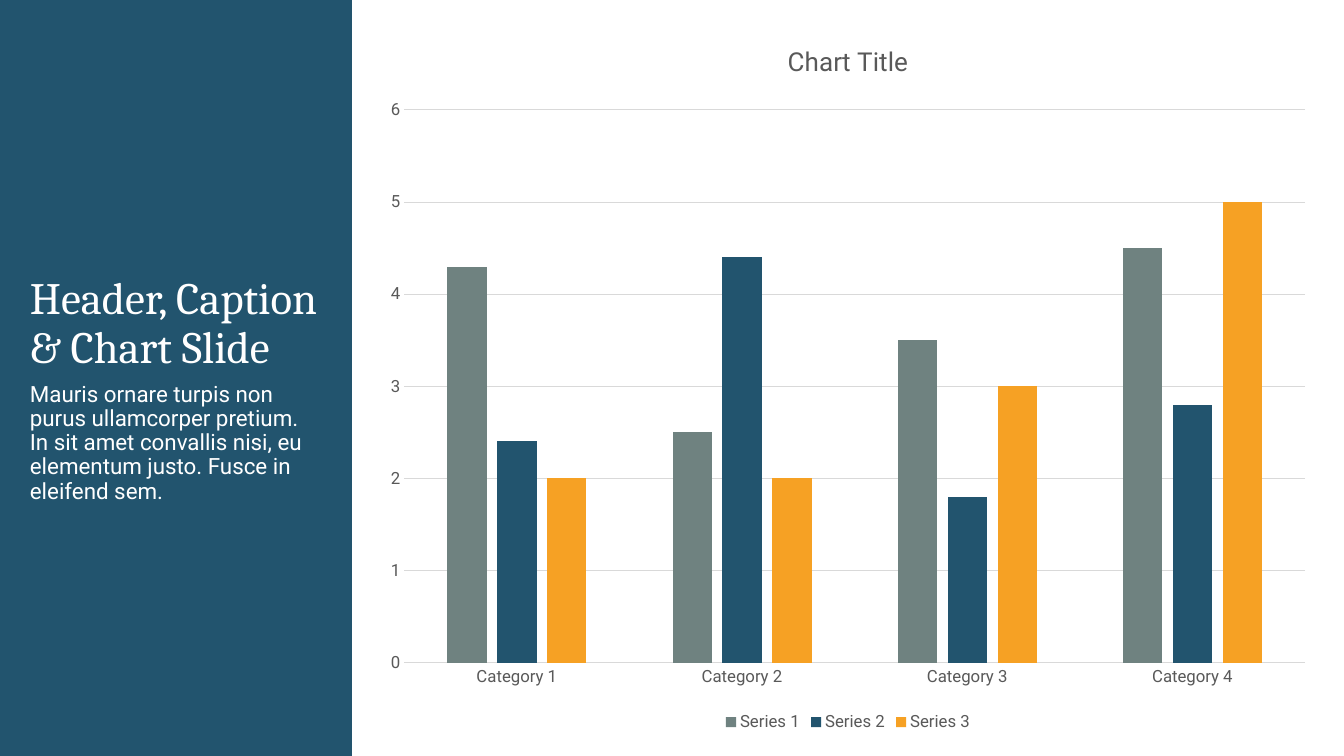
"""Build a slide with a header and caption panel beside a clustered column chart."""
from pptx import Presentation
from pptx.chart.data import CategoryChartData
from pptx.dml.color import RGBColor
from pptx.enum.chart import XL_CHART_TYPE, XL_LEGEND_POSITION, XL_TICK_MARK
from pptx.enum.shapes import MSO_SHAPE
from pptx.enum.text import MSO_ANCHOR, MSO_AUTO_SIZE, PP_ALIGN
from pptx.util import Cm, Pt

TITLE = "Header, Caption & Chart Slide"
CAPTION = (
    "Mauris ornare turpis non purus ullamcorper pretium. "
    "In sit amet convallis nisi, eu elementum justo. Fusce in eleifend sem."
)
CHART_TITLE = "Chart Title"
CATEGORIES = ["Category 1", "Category 2", "Category 3", "Category 4"]
SERIES = [
    ("Series 1", (4.3, 2.5, 3.5, 4.5), "gray"),
    ("Series 2", (2.4, 4.4, 1.8, 2.8), "blue"),
    ("Series 3", (2, 2, 3, 5), "orange"),
]
COLORS = {
    "gray": "6F8280",
    "blue": "22546E",
    "orange": "F6A124",
    "white": "FFFFFF",
    "label": "595959",
    "grid": "D9D9D9",
}
HEADING_FONT, BODY_FONT = "Cambria", "Roboto"

COLUMN_CLUSTERED = XL_CHART_TYPE.COLUMN_CLUSTERED
LEGEND_BOTTOM = XL_LEGEND_POSITION.BOTTOM
NO_TICK = XL_TICK_MARK.NONE
RECTANGLE = MSO_SHAPE.RECTANGLE
TOP, BOTTOM = MSO_ANCHOR.TOP, MSO_ANCHOR.BOTTOM
NO_AUTOFIT = MSO_AUTO_SIZE.NONE
LEFT = PP_ALIGN.LEFT

SLIDE_WIDTH, SLIDE_HEIGHT = Cm(33.87), Cm(19.05)
PANEL_WIDTH = Cm(8.87)
MARGIN = Cm(0.5)
TEXT_WIDTH = Cm(7.83)
CONTENT_HEIGHT = SLIDE_HEIGHT - 2 * MARGIN
TEXT_HEIGHT = CONTENT_HEIGHT // 2
CHART_LEFT = PANEL_WIDTH + MARGIN
CHART_WIDTH = SLIDE_WIDTH - MARGIN - CHART_LEFT


def color(name):
    return RGBColor.from_string(COLORS[name])


def format_font(font, name, size, color_name):
    font.name = name
    font.size = Pt(size)
    font.bold = False
    font.color.rgb = color(color_name)


def format_line(line):
    line.color.rgb = color("grid")
    line.width = Pt(0.75)


def add_panel(slide):
    panel = slide.shapes.add_shape(RECTANGLE, 0, 0, PANEL_WIDTH, SLIDE_HEIGHT)
    panel.shadow.inherit = False
    panel.fill.solid()
    panel.fill.fore_color.rgb = color("blue")
    panel.line.fill.background()
    slide.shapes._spTree.insert(2, panel._element)


def fill_placeholder(shape, text, top, anchor, font_name, size, space_before):
    shape.left, shape.top = MARGIN, top
    shape.width, shape.height = TEXT_WIDTH, TEXT_HEIGHT
    frame = shape.text_frame
    frame.text = text
    frame.word_wrap = True
    frame.auto_size = NO_AUTOFIT
    frame.vertical_anchor = anchor
    paragraph = frame.paragraphs[0]
    paragraph.alignment = LEFT
    paragraph.line_spacing = 0.9
    paragraph.space_before = Pt(space_before)
    format_font(paragraph.runs[0].font, font_name, size, "white")


def add_column_chart(slide):
    data = CategoryChartData()
    data.categories = CATEGORIES
    for name, values, _ in SERIES:
        data.add_series(name, values)
    chart = slide.shapes.add_chart(
        COLUMN_CLUSTERED, CHART_LEFT, MARGIN, CHART_WIDTH, CONTENT_HEIGHT, data
    ).chart
    format_font(chart.font, BODY_FONT, 12, "label")

    chart.has_title = True
    title_frame = chart.chart_title.text_frame
    title_frame.text = CHART_TITLE
    format_font(title_frame.paragraphs[0].runs[0].font, BODY_FONT, 18.6, "label")
    chart.chart_title.include_in_layout = False

    chart.has_legend = True
    chart.legend.position = LEGEND_BOTTOM
    chart.legend.include_in_layout = False
    format_font(chart.legend.font, BODY_FONT, 12, "label")

    for axis in (chart.category_axis, chart.value_axis):
        axis.major_tick_mark = axis.minor_tick_mark = NO_TICK
        format_font(axis.tick_labels.font, BODY_FONT, 12, "label")
    format_line(chart.category_axis.format.line)
    value_axis = chart.value_axis
    value_axis.minimum_scale, value_axis.maximum_scale = 0, 6
    value_axis.major_unit = 1
    value_axis.format.line.fill.background()
    format_line(value_axis.major_gridlines.format.line)

    plot = chart.plots[0]
    plot.vary_by_categories = False
    plot.gap_width, plot.overlap = 219, -27
    for series, (_, _, color_name) in zip(plot.series, SERIES):
        series.format.fill.solid()
        series.format.fill.fore_color.rgb = color(color_name)


def main():
    presentation = Presentation()
    presentation.slide_width, presentation.slide_height = SLIDE_WIDTH, SLIDE_HEIGHT
    layout = presentation.slide_layouts.get_by_name("Content with Caption")
    slide = presentation.slides.add_slide(layout)
    title, content, caption = slide.placeholders
    content._element.getparent().remove(content._element)

    add_panel(slide)
    add_column_chart(slide)
    fill_placeholder(title, TITLE, MARGIN, BOTTOM, HEADING_FONT, 32, 0)
    fill_placeholder(caption, CAPTION, MARGIN + TEXT_HEIGHT, TOP, BODY_FONT, 16, 10)
    presentation.save("out.pptx")


if __name__ == "__main__":
    main()
